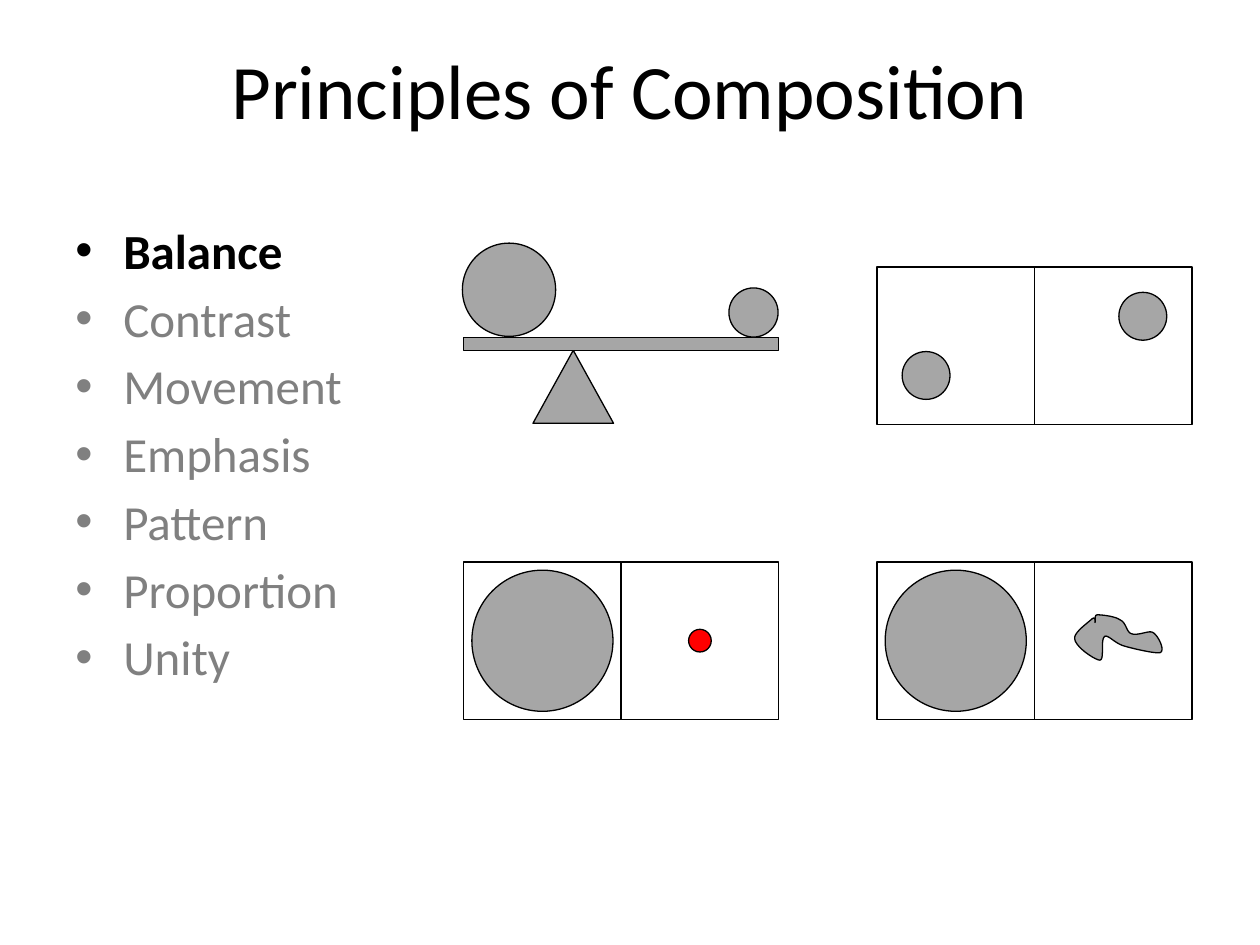
from dataclasses import dataclass

from lxml import etree
from pptx import Presentation
from pptx.dml.color import RGBColor
from pptx.enum.shapes import MSO_SHAPE
from pptx.enum.text import MSO_ANCHOR, PP_ALIGN
from pptx.oxml.ns import qn
from pptx.util import Inches, Pt

RECT, OVAL, TRIANGLE = MSO_SHAPE.RECTANGLE, MSO_SHAPE.OVAL, MSO_SHAPE.ISOSCELES_TRIANGLE
MIDDLE, CENTER, LEFT = MSO_ANCHOR.MIDDLE, PP_ALIGN.CENTER, PP_ALIGN.LEFT


@dataclass(frozen=True)
class Theme:
    font: str = "Calibri"
    title_size: float = 44
    body_size: float = 28
    space_before: float = 5.1
    line_width: float = 0.75
    ink: RGBColor = RGBColor(0x00, 0x00, 0x00)
    muted: RGBColor = RGBColor(0x80, 0x80, 0x80)
    gray: RGBColor = RGBColor(0xA6, 0xA6, 0xA6)
    red: RGBColor = RGBColor(0xFF, 0x00, 0x00)


@dataclass(frozen=True)
class Disc:
    x: float  # centre
    y: float
    diameter: float
    color: RGBColor


THEME = Theme()
PRINCIPLES = ["Balance", "Contrast", "Movement", "Emphasis", "Pattern", "Proportion", "Unity"]
CURRENT = "Balance"

CELL = 1.25
LEFT_COL, RIGHT_COL = 3.68, 6.96
TOP_ROW, BOTTOM_ROW = 2.12, 4.46
FRAMES = [(RIGHT_COL, TOP_ROW), (LEFT_COL, BOTTOM_ROW), (RIGHT_COL, BOTTOM_ROW)]
BOTTOM_MID = BOTTOM_ROW + CELL / 2
DISCS = [
    Disc(7.35, 2.98, 0.38, THEME.gray),
    Disc(9.07, 2.51, 0.38, THEME.gray),
    Disc(LEFT_COL + CELL / 2, BOTTOM_MID, 1.12, THEME.gray),
    Disc(LEFT_COL + CELL * 1.5, BOTTOM_MID, 0.18, THEME.red),
    Disc(RIGHT_COL + CELL / 2, BOTTOM_MID, 1.12, THEME.gray),
    Disc(4.04, 2.3, 0.74, THEME.gray),
    Disc(5.98, 2.48, 0.39, THEME.gray),
]

BLOB_START = (8.67, 4.91)
# Each row: two control points and the end of one cubic curve.
BLOB_CURVES = [
    ((8.64, 4.94), (8.52, 5.02), (8.53, 5.07)),
    ((8.53, 5.13), (8.69, 5.24), (8.73, 5.24)),
    ((8.77, 5.24), (8.73, 5.07), (8.77, 5.05)),
    ((8.8, 5.04), (8.85, 5.11), (8.93, 5.13)),
    ((9, 5.15), (9.17, 5.19), (9.21, 5.18)),
    ((9.25, 5.16), (9.19, 5.04), (9.15, 5.02)),
    ((9.12, 5), (9.03, 5.05), (8.98, 5.03)),
    ((8.94, 5.02), (8.94, 4.94), (8.89, 4.92)),
    ((8.85, 4.89), (8.74, 4.88), (8.71, 4.88)),
    ((8.68, 4.88), (8.7, 4.94), (8.69, 4.94)),
    ((8.69, 4.95), (8.7, 4.89), BLOB_START),
]


def style(sp, fill: RGBColor | None) -> None:
    sp.shadow.inherit = False
    if fill is None:
        sp.fill.background()
    else:
        sp.fill.solid()
        sp.fill.fore_color.rgb = fill
    sp.line.color.rgb = THEME.ink
    sp.line.width = Pt(THEME.line_width)


def add_figure(s, kind, x: float, y: float, w: float, h: float,
               fill: RGBColor | None = None) -> None:
    sp = s.shapes.add_shape(kind, Inches(x), Inches(y), Inches(w), Inches(h))
    style(sp, fill)


def add_frame(s, x: float, y: float) -> None:
    """Draw two square cells side by side."""
    for column in range(2):
        add_figure(s, RECT, x + column * CELL, y, CELL, CELL)


def add_disc(s, disc: Disc) -> None:
    d = disc.diameter
    add_figure(s, OVAL, disc.x - d / 2, disc.y - d / 2, d, d, disc.color)


def add_blob(s, steps: int = 10) -> None:
    """Draw the irregular outline, each curve divided into short segments."""
    points, start = [], BLOB_START
    for c1, c2, end in BLOB_CURVES:
        for i in range(1, steps + 1):
            t = i / steps
            u = 1 - t
            points.append(tuple(
                Inches(u**3 * a + 3 * u * u * t * b + 3 * u * t * t * c + t**3 * d)
                for a, b, c, d in zip(start, c1, c2, end)))
        start = end
    builder = s.shapes.build_freeform(*(Inches(v) for v in BLOB_START))
    builder.add_line_segments(points, close=True)
    style(builder.convert_to_shape(), THEME.gray)


def add_text_frame(s, x: float, y: float, w: float, h: float):
    tf = s.shapes.add_textbox(Inches(x), Inches(y), Inches(w), Inches(h)).text_frame
    tf.word_wrap = True
    return tf


def add_run(p, text: str, size: float, color: RGBColor, bold: bool = False) -> None:
    r = p.add_run()
    r.text = text
    r.font.name = THEME.font
    r.font.size = Pt(size)
    r.font.bold = bold
    r.font.color.rgb = color


def set_bullet(p, indent: float) -> None:
    pPr = p._p.get_or_add_pPr()
    pPr.set("marL", str(Inches(indent)))
    pPr.set("indent", str(-Inches(indent)))
    etree.SubElement(pPr, qn("a:buFont")).set("typeface", "Arial")
    etree.SubElement(pPr, qn("a:buChar")).set("char", "•")


def add_title(s) -> None:
    tf = add_text_frame(s, 0.5, 0.08, 9, 1.25)
    tf.vertical_anchor = MIDDLE
    p = tf.paragraphs[0]
    p.alignment = CENTER
    add_run(p, "Principles of Composition", THEME.title_size, THEME.ink)


def add_principles(s) -> None:
    tf = add_text_frame(s, 0.5, 1.7, 2.92, 4.21)
    for i, name in enumerate(PRINCIPLES):
        p = tf.add_paragraph() if i else tf.paragraphs[0]
        p.alignment = LEFT
        p.space_before = Pt(THEME.space_before)
        set_bullet(p, 0.38)
        current = name == CURRENT
        add_run(p, name, THEME.body_size, THEME.ink if current else THEME.muted, current)


def main() -> None:
    prs = Presentation()
    prs.slide_width, prs.slide_height = Inches(10), Inches(7.5)
    s = prs.slides.add_slide(prs.slide_layouts[6])
    add_title(s)
    add_principles(s)
    for x, y in FRAMES:
        add_frame(s, x, y)
    add_figure(s, TRIANGLE, 4.23, 2.78, 0.64, 0.58, THEME.gray)
    add_figure(s, RECT, LEFT_COL, 2.68, 2 * CELL, 0.1, THEME.gray)
    for disc in DISCS:
        add_disc(s, disc)
    add_blob(s)
    prs.save("out.pptx")


if __name__ == "__main__":
    main()
